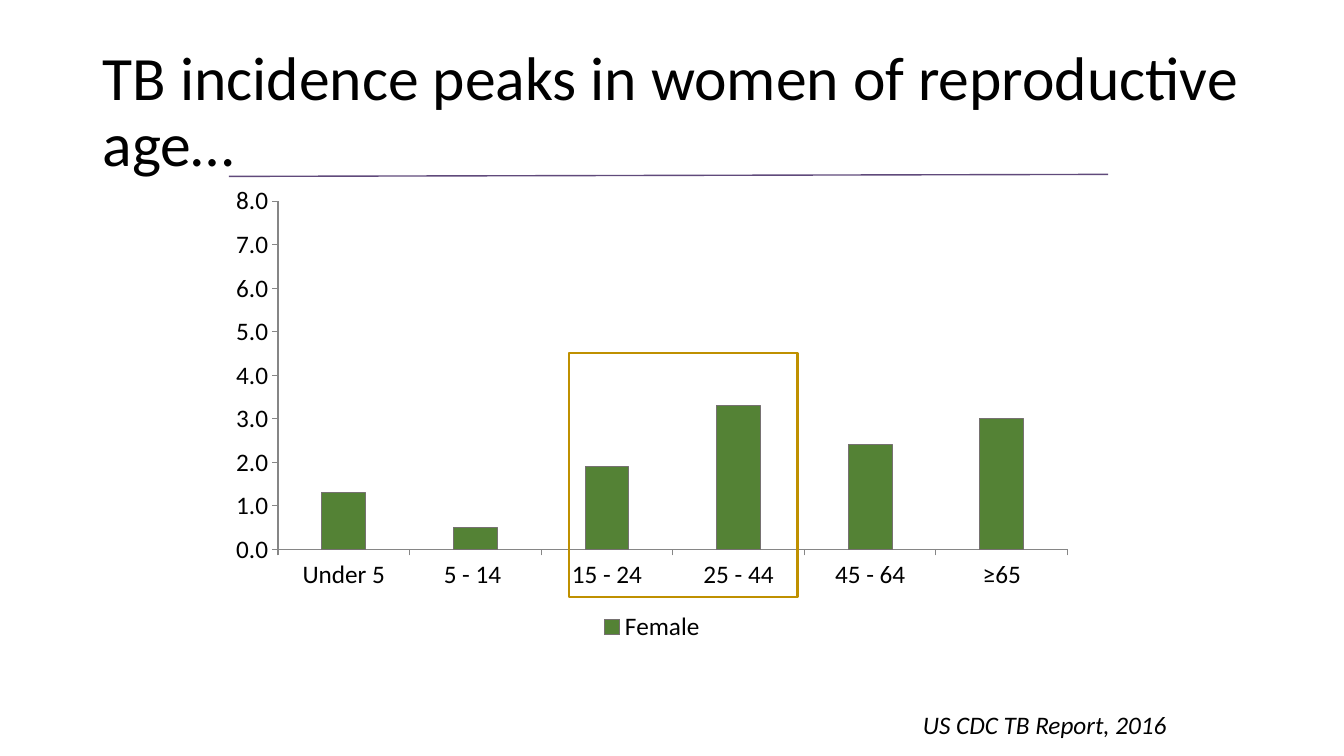
"""Build a slide charting TB incidence in women by age group."""
from lxml.etree import SubElement
from pptx import Presentation
from pptx.chart.data import CategoryChartData
from pptx.dml.color import RGBColor
from pptx.enum.chart import XL_CHART_TYPE, XL_LEGEND_POSITION, XL_TICK_MARK
from pptx.enum.shapes import MSO_CONNECTOR, MSO_SHAPE
from pptx.enum.text import MSO_ANCHOR, MSO_AUTO_SIZE, PP_ALIGN
from pptx.oxml.ns import qn
from pptx.util import Inches, Pt

TITLE = "TB incidence peaks in women of reproductive age…"
SOURCE = "US CDC TB Report, 2016"
SERIES = "Female"
INCIDENCE = {
    "Under 5": 1.3,
    "5 - 14 ": 0.5,
    "15 - 24": 1.9,
    "25 - 44": 3.3,
    "45 - 64": 2.4,
    "≥65": 3.0,
}
FONT = "Calibri"
BLACK, GREEN, GRAY = "000000", "548235", "767171"
PURPLE, GOLD, AXIS = "604A7B", "BF9000", "868686"

TITLE_BOX = (0.92, 0.4, 11.5, 1.45)
CHART_BOX = (2.17, 1.75, 8.59, 4.67)
SOURCE_BOX = (8.39, 6.99, 3.28, 0.4)
RULE_ENDS = (2.27, 1.75, 10.99, 1.73)
HIGHLIGHT_BOX = (5.64, 3.5, 2.27, 2.42)


def inches(values):
    return [Inches(v) for v in values]


def rgb(value):
    return RGBColor.from_string(value)


def style_font(font, size):
    font.name, font.size = FONT, Pt(size)
    font.color.rgb = rgb(BLACK)


def style_line(line, color, width):
    line.color.rgb = rgb(color)
    line.width = Pt(width)


def add_title(s):
    title = s.shapes.title
    title.left, title.top, title.width, title.height = inches(TITLE_BOX)
    tf = title.text_frame
    tf.text = TITLE
    tf.word_wrap = True
    tf.auto_size = MSO_AUTO_SIZE.NONE
    tf.vertical_anchor = MSO_ANCHOR.MIDDLE
    p = tf.paragraphs[0]
    p.alignment, p.line_spacing = PP_ALIGN.LEFT, 0.9
    style_font(p.runs[0].font, 44)


def add_incidence_chart(s):
    data = CategoryChartData(number_format="#,##0.0")
    data.categories = list(INCIDENCE)
    data.add_series(SERIES, list(INCIDENCE.values()))
    chart = s.shapes.add_chart(
        XL_CHART_TYPE.COLUMN_CLUSTERED, *inches(CHART_BOX), data).chart
    style_font(chart.font, 18)
    chart.has_title = False
    chart.has_legend = True
    chart.legend.position = XL_LEGEND_POSITION.BOTTOM
    chart.legend.include_in_layout = False

    for axis in (chart.category_axis, chart.value_axis):
        axis.has_major_gridlines = False
        axis.major_tick_mark = XL_TICK_MARK.OUTSIDE
        axis.minor_tick_mark = XL_TICK_MARK.NONE
        style_line(axis.format.line, AXIS, 0.75)
    values = chart.value_axis
    values.minimum_scale, values.maximum_scale, values.major_unit = 0, 8, 1
    values.tick_labels.number_format = "#,##0.0"
    values.tick_labels.number_format_is_linked = False

    plot = chart.plots[0]
    plot.gap_width = 200
    plot.vary_by_categories = False
    bars = plot.series[0].format
    bars.fill.solid()
    bars.fill.fore_color.rgb = rgb(GREEN)
    style_line(bars.line, GRAY, 0.75)


def add_source(s):
    tf = s.shapes.add_textbox(*inches(SOURCE_BOX)).text_frame
    tf.text = SOURCE
    tf.word_wrap = True
    tf.auto_size = MSO_AUTO_SIZE.SHAPE_TO_FIT_TEXT
    p = tf.paragraphs[0]
    p.alignment = PP_ALIGN.RIGHT
    style_font(p.runs[0].font, 18)
    p.runs[0].font.italic = True


def add_rule(s):
    rule = s.shapes.add_connector(MSO_CONNECTOR.STRAIGHT, *inches(RULE_ENDS))
    style_line(rule.line, PURPLE, 1)
    SubElement(rule.element.spPr, qn("a:effectLst"))


def add_highlight(s):
    sp = s.shapes.add_shape(MSO_SHAPE.RECTANGLE, *inches(HIGHLIGHT_BOX))
    sp.shadow.inherit = False
    sp.fill.background()
    style_line(sp.line, GOLD, 1.5)


def main():
    prs = Presentation()
    prs.slide_width, prs.slide_height = inches((13.33, 7.5))
    s = prs.slides.add_slide(prs.slide_layouts[5])
    add_title(s)
    add_incidence_chart(s)
    add_source(s)
    add_rule(s)
    add_highlight(s)
    prs.save("out.pptx")


if __name__ == "__main__":
    main()
